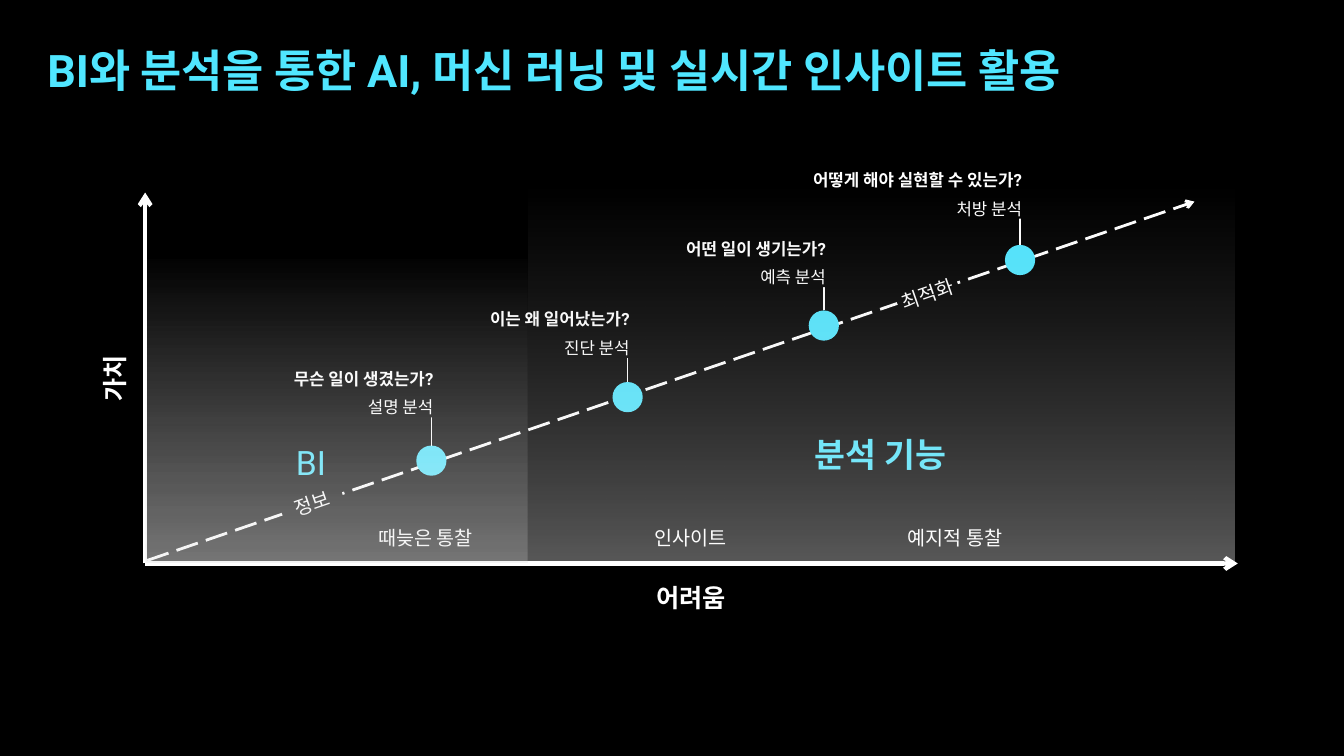
"""Build the slide on BI and analytics: value against difficulty."""
from pptx import Presentation
from pptx.dml.color import RGBColor
from pptx.enum.dml import MSO_LINE
from pptx.enum.shapes import MSO_CONNECTOR, MSO_SHAPE
from pptx.enum.text import MSO_ANCHOR, MSO_AUTO_SIZE, PP_ALIGN
from pptx.oxml import parse_xml
from pptx.oxml.ns import nsdecls, qn
from pptx.util import Pt
from lxml.etree import SubElement

COLORS = {"back": "000000", "text": "FFFFFF", "cyan": "50E6FF",
          "mist": "EBEBEB", "gray": "A6A6A6"}
RGB = {name: RGBColor.from_string(code) for name, code in COLORS.items()}
CELL = 152400
COLS, ROWS = 80, 45

deck = Presentation()
deck.slide_width, deck.slide_height = COLS * CELL, ROWS * CELL
slide = deck.slides.add_slide(deck.slide_layouts[5])
slide.background.fill.solid()
slide.background.fill.fore_color.rgb = RGB["back"]
shapes = slide.shapes


def block(kind, box, fill=None, lines=(), size=14, bold=False, color="text",
          align=PP_ALIGN.CENTER, after=0, inset=(0, 0), turn=0):
    """Add a shape on the grid, with its text when there is any."""
    shape = shapes.add_shape(kind, *[round(n * CELL) for n in box])
    shape.shadow.inherit = False
    shape.line.fill.background()
    shape.rotation = turn
    if fill:
        shape.fill.solid()
        shape.fill.fore_color.rgb = RGB[fill]
    else:
        shape.fill.background()
    if lines:
        frame = shape.text_frame
        frame.word_wrap = True
        frame.auto_size = MSO_AUTO_SIZE.SHAPE_TO_FIT_TEXT
        frame.margin_left = frame.margin_right = round(inset[0] * CELL)
        frame.margin_top = frame.margin_bottom = round(inset[1] * CELL)
        frame.text = "\n".join(lines)
        for row, para in enumerate(frame.paragraphs):
            para.alignment = align
            para.space_after = Pt(after)
            para.font.name, para.font.size = "Roboto", Pt(size)
            para.font.bold = bold and row == 0
            para.font.color.rgb = RGB[color]
    return shape


def line(start, end, width, arrow=False):
    """Add a white line on the grid, with an arrowhead on demand."""
    link = shapes.add_connector(MSO_CONNECTOR.STRAIGHT,
                                *[round(n * CELL) for n in (*start, *end)])
    link.line.color.rgb = RGB["text"]
    link.line.width = Pt(width)
    if arrow:
        SubElement(link.line._get_or_add_ln(), qn("a:tailEnd"), type="arrow")
    SubElement(link._element.spPr, qn("a:effectLst"))
    return link


title = shapes.title
title.left, title.top = round(2.82 * CELL), round(2.88 * CELL)
title.width, title.height = round(74.4 * CELL), round(2.88 * CELL)
frame = title.text_frame
frame.margin_left = frame.margin_right = frame.margin_top = frame.margin_bottom = 0
frame.vertical_anchor = MSO_ANCHOR.MIDDLE
frame.text = "BI와 분석을 통한 AI, 머신 러닝 및 실시간 인사이트 활용"
head = frame.paragraphs[0]
head.alignment, head.line_spacing = PP_ALIGN.LEFT, 0.9
head.font.name, head.font.size, head.font.bold = "Roboto", Pt(32), True
head.font.color.rgb = RGB["cyan"]

RECT, OVAL = MSO_SHAPE.RECTANGLE, MSO_SHAPE.OVAL
block(RECT, (3.84, 8.34, 72.3, 29.94), "back")

zero = (8.64, 33.54)
for end in ((8.64, 11.46), (73.68, 33.54)):
    line(zero, end, 3, True)
block(RECT, (3.84, 21.6, 5.94, 1.8), lines=["가치"], size=18, bold=True, turn=270)
block(RECT, (37.44, 34.68, 7.38, 1.8), lines=["어려움"], size=18, bold=True)

trend = line((8.76, 33.36), (71.1, 12), 2, True)
trend.line.dash_style = MSO_LINE.LONG_DASH
for x, y, word in ((53.34, 16.8, "최적화"), (16.68, 29.22, "정보")):
    block(RECT, (x, y, 3.78, 1.44), "back", [word], turn=341)

for x, y, word, bold in ((10.68, 25.44, "BI", False), (44.58, 24.96, "분석 기능", True)):
    block(RECT, (x, y, 15.66, 4.14), None, [word], 24, bold, "cyan",
          after=6, inset=(1.2, 0.96))

STEPS = [
    (27.42, 23.64, 21.9, 9.84, "무슨 일이 생겼는가?", "설명 분석"),
    (23.64, 20.28, 18.36, 9.84, "이는 왜 일어났는가?", "진단 분석"),
    (19.38, 15.9, 14.16, 9.96, "어떤 일이 생기는가?", "예측 분석"),
    (15.48, 11.46, 10.08, 14.64, "어떻게 해야 실현할 수 있는가?", "처방 분석"),
]
DOT = 1.8
for step, (mid, tip, top, wide, ask, name) in enumerate(STEPS):
    x = 25.68 + 11.68 * step
    block(OVAL, (x - DOT / 2, mid - DOT / 2, DOT, DOT), "cyan")
    line((x, mid - DOT / 2), (x, tip), 1.25)
    block(RECT, (x + 0.12 - wide, top, wide, 2.94), "back", [ask, name], 12, True,
          align=PP_ALIGN.RIGHT, after=6)

STAGES = ["때늦은 통찰", "인사이트", "예지적 통찰"]
table = shapes.add_table(1, len(STAGES), *[round(n * CELL) for n in
                                           (17.46, 30.72, 47.28, 2.46)]).table
table.first_row = table.horz_banding = False
style = table._tbl.tblPr.find(qn("a:tableStyleId"))
style.text = "{2D5ABB26-0587-4C30-8999-92F81FD0307C}"
for cell, stage in zip(table.rows[0].cells, STAGES):
    cell.fill.background()
    cell.vertical_anchor = MSO_ANCHOR.MIDDLE
    cell.text = stage
    para = cell.text_frame.paragraphs[0]
    para.alignment = PP_ALIGN.CENTER
    para.font.name, para.font.size = "Roboto", Pt(14)
    para.font.color.rgb = RGB["text"]

VEILS = [
    ((8.64, 10.74, 22.74, 22.74), ((20, "mist", 0), (100, "mist", 50))),
    ((31.44, 10.68, 42.06, 22.74), ((0, "gray", 0), (100, "text", 35))),
]
for box, stops in VEILS:
    props = block(RECT, box)._element.spPr
    marks = "".join(
        f'<a:gs pos="{pos * 1000}"><a:srgbClr val="{COLORS[tone]}">'
        f'<a:alpha val="{alpha * 1000}"/></a:srgbClr></a:gs>'
        for pos, tone, alpha in stops)
    fade = parse_xml(f'<a:gradFill {nsdecls("a")}><a:gsLst>{marks}</a:gsLst>'
                     '<a:lin ang="5400000" scaled="0"/></a:gradFill>')
    props.replace(props.find(qn("a:noFill")), fade)

deck.save("out.pptx")
